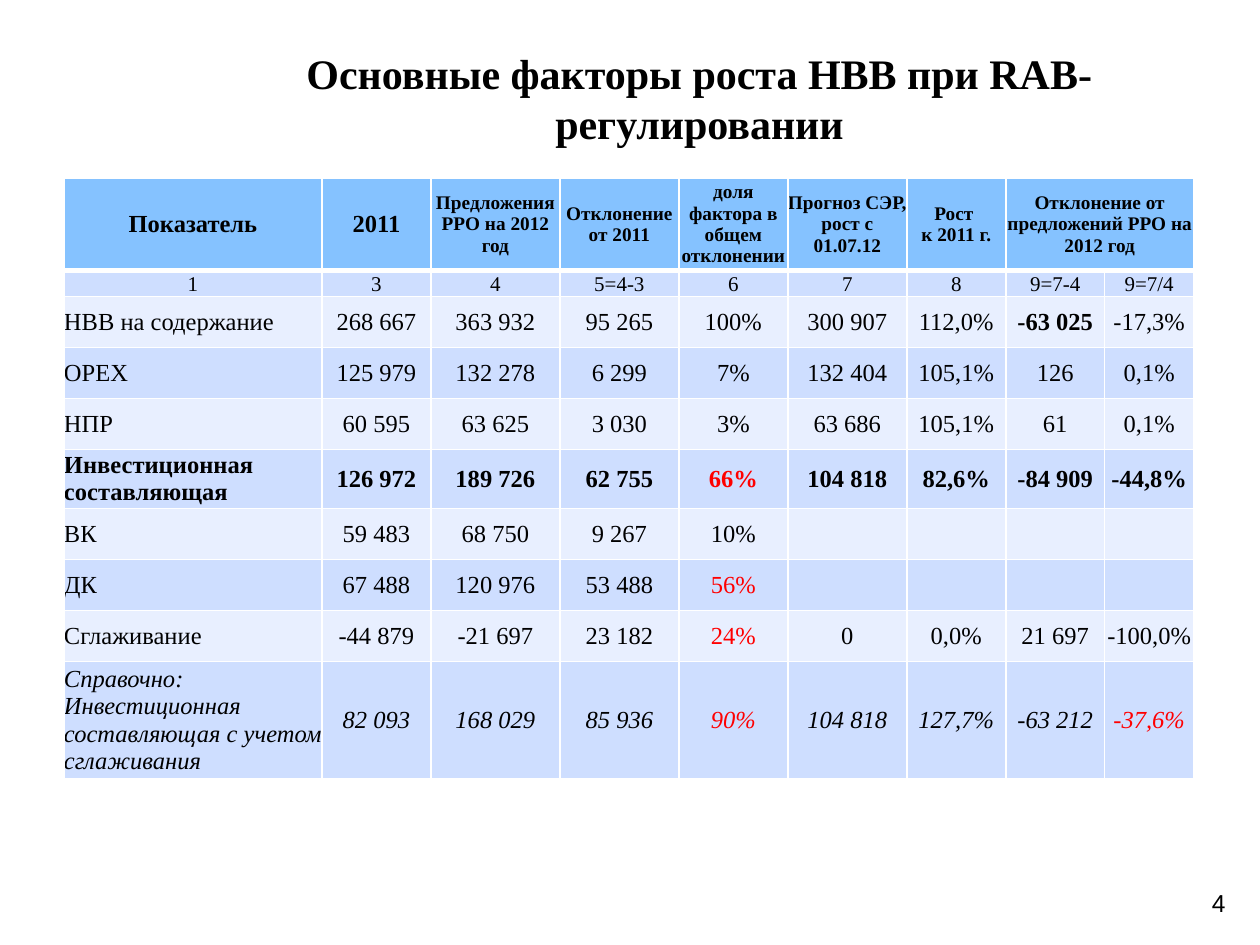
from lxml import etree
from pptx import Presentation
from pptx.dml.color import RGBColor
from pptx.enum.text import MSO_ANCHOR, PP_ALIGN
from pptx.oxml.ns import qn
from pptx.util import Emu, Pt

PX_PER_INCH = 126
SERIF = "Times New Roman"
BLACK, WHITE, RED = "000000", "FFFFFF", "FF0000"
HEADER_FILL, DARK_BAND, LIGHT_BAND = "85C2FF", "CEDEFF", "E8EFFF"

COLUMN_WIDTHS = [258, 109, 129, 119, 109, 119, 99, 99, 89]
HEADER_HEIGHT, NUMBERING_HEIGHT, DATA_HEIGHT = 51, 26, 51

HEADERS = [
    "Показатель", "2011", "Предложения РРО на 2012 год", "Отклонение от 2011",
    "доля фактора в общем отклонении", "Прогноз СЭР, рост с 01.07.12",
    "Рост \nк 2011 г.", "Отклонение от предложений РРО на 2012 год",
]
COLUMN_NUMBERS = ["1", "3", "4", "5=4-3", "6", "7", "8", "9=7-4", "9=7/4"]
INDICATORS = [
    ["НВВ на содержание", "268 667", "363 932", "95 265", "100%",
     "300 907", "112,0%", "-63 025", "-17,3%"],
    ["ОРЕХ", "125 979", "132 278", "6 299", "7%", "132 404", "105,1%", "126", "0,1%"],
    ["НПР", "60 595", "63 625", "3 030", "3%", "63 686", "105,1%", "61", "0,1%"],
    ["Инвестиционная составляющая", "126 972", "189 726", "62 755", "66%",
     "104 818", "82,6%", "-84 909", "-44,8%"],
    ["ВК", "59 483", "68 750", "9 267", "10%", "", "", "", ""],
    ["ДК", "67 488", "120 976", "53 488", "56%", "", "", "", ""],
    ["Сглаживание", "-44 879", "-21 697", "23 182", "24%",
     "0", "0,0%", "21 697", "-100,0%"],
    ["Справочно: Инвестиционная составляющая с учетом сглаживания",
     "82 093", "168 029", "85 936", "90%", "104 818", "127,7%", "-63 212", "-37,6%"],
]
INVESTMENT_ROW, REFERENCE_ROW = 3, 7
BOLD_CELL = (0, 7)
RED_CELLS = {(3, 4), (5, 4), (6, 4), (7, 4), (7, 8)}


def px(length):
    return Emu(round(length * 914400 / PX_PER_INCH))


def rgb(value):
    return RGBColor.from_string(value)


def style_text(frame, size, align, font=SERIF, color=BLACK, bold=False, italic=False):
    for paragraph in frame.paragraphs:
        paragraph.alignment = align
        paragraph.font.name = font
        paragraph.font.size = Pt(size)
        paragraph.font.bold = bold
        paragraph.font.italic = italic
        paragraph.font.color.rgb = rgb(color)


def add_text(slide, text, left, top, width, height, anchor, **style):
    frame = slide.shapes.add_textbox(px(left), px(top), px(width), px(height)).text_frame
    frame.word_wrap = True
    frame.vertical_anchor = anchor
    frame.text = text
    style_text(frame, **style)


def set_borders(cell, top=1, bottom=1):
    properties = cell._tc.get_or_add_tcPr()
    for side, width in (("L", 1), ("R", 1), ("T", top), ("B", bottom)):
        line = etree.SubElement(properties, qn(f"a:ln{side}"), w=str(Pt(width)))
        fill = etree.SubElement(line, qn("a:solidFill"))
        etree.SubElement(fill, qn("a:srgbClr"), val=WHITE)


def fill_cell(cell, text, fill, size, align=PP_ALIGN.CENTER,
              anchor=MSO_ANCHOR.MIDDLE, top=1, bottom=1, **style):
    cell.margin_left = cell.margin_right = cell.margin_top = cell.margin_bottom = 0
    cell.vertical_anchor = anchor
    set_borders(cell, top, bottom)
    cell.fill.solid()
    cell.fill.fore_color.rgb = rgb(fill)
    cell.text_frame.text = text
    style_text(cell.text_frame, size, align, **style)


def add_factor_table(slide):
    heights = [HEADER_HEIGHT, NUMBERING_HEIGHT] + [DATA_HEIGHT] * len(INDICATORS)
    table = slide.shapes.add_table(
        len(heights), len(COLUMN_WIDTHS), px(64), px(178),
        px(sum(COLUMN_WIDTHS)), px(sum(heights))).table
    for column, width in zip(table.columns, COLUMN_WIDTHS):
        column.width = px(width)
    for row, height in zip(table.rows, heights):
        row.height = px(height)

    # Header: the last heading spans both deviation columns
    table.cell(0, 7).merge(table.cell(0, 8))
    for col, heading in enumerate(HEADERS + [""]):
        fill_cell(table.cell(0, col), heading, HEADER_FILL,
                  size=14 if col < 2 else 11, bold=True, bottom=3)

    # Column numbering
    for col, number in enumerate(COLUMN_NUMBERS):
        fill_cell(table.cell(1, col), number, DARK_BAND, size=12,
                  anchor=MSO_ANCHOR.BOTTOM, top=3)

    # Indicators in alternating bands
    for row, values in enumerate(INDICATORS):
        for col, value in enumerate(values):
            fill_cell(
                table.cell(row + 2, col), value,
                DARK_BAND if row % 2 else LIGHT_BAND, size=14,
                align=PP_ALIGN.CENTER if col else PP_ALIGN.LEFT,
                color=RED if (row, col) in RED_CELLS else BLACK,
                bold=row == INVESTMENT_ROW or (row, col) == BOLD_CELL,
                italic=row == REFERENCE_ROW)


def main():
    presentation = Presentation()
    presentation.slide_width, presentation.slide_height = px(1260), px(945)
    slide = presentation.slides.add_slide(presentation.slide_layouts[6])

    # Title
    add_text(slide, "Основные факторы роста НВВ при RAB-регулировании",
             154, 40, 1091, 115, MSO_ANCHOR.MIDDLE,
             size=24, align=PP_ALIGN.CENTER, bold=True)
    add_factor_table(slide)
    # Page number
    add_text(slide, "4", 976, 882, 262, 42, MSO_ANCHOR.TOP,
             size=14, align=PP_ALIGN.RIGHT, font="Arial")

    presentation.save("out.pptx")


if __name__ == "__main__":
    main()
